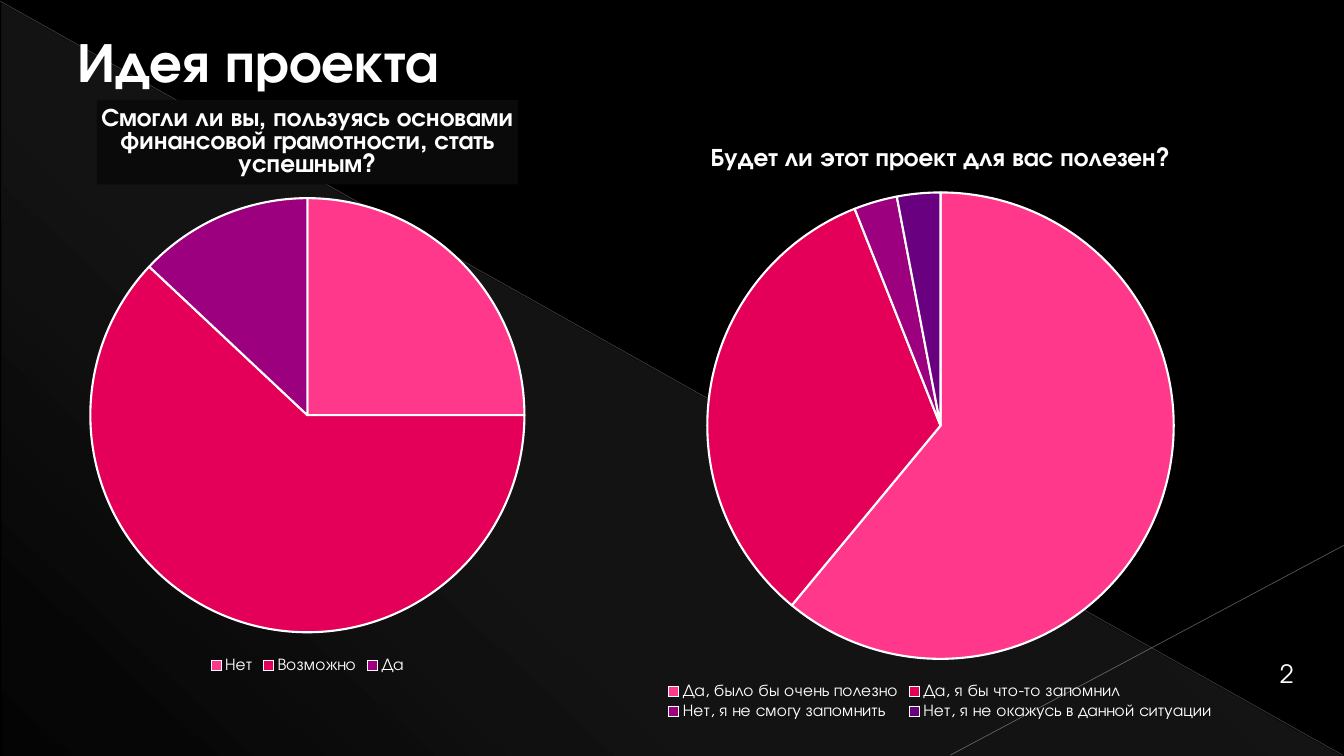
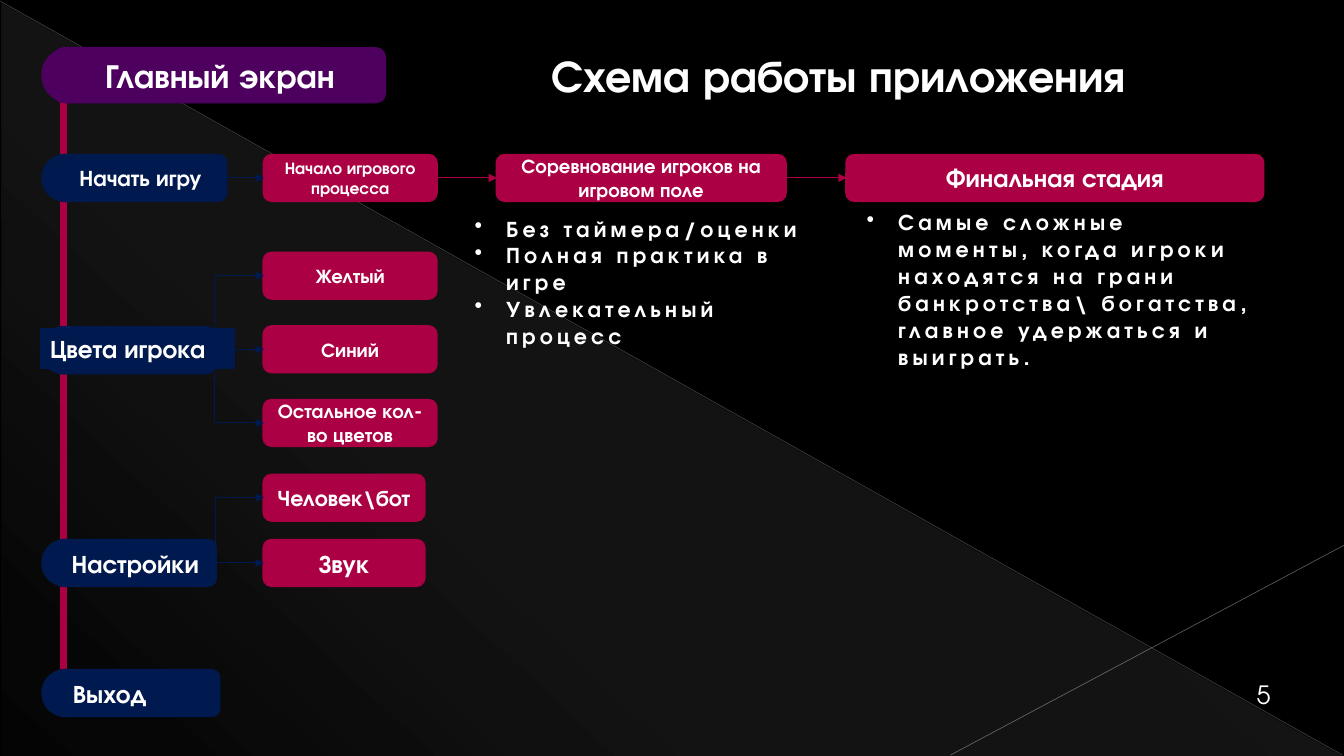
from dataclasses import dataclass

from lxml import etree
from pptx import Presentation
from pptx.chart.data import CategoryChartData
from pptx.dml.color import RGBColor
from pptx.enum.chart import XL_CHART_TYPE, XL_LEGEND_POSITION
from pptx.enum.shapes import MSO_CONNECTOR, MSO_SHAPE
from pptx.enum.text import MSO_ANCHOR, PP_ALIGN
from pptx.oxml import parse_xml
from pptx.oxml.ns import nsdecls, qn
from pptx.util import Pt


@dataclass(frozen=True)
class Theme:
    """Colours and type sizes of the presentation."""

    font: str = "TeX Gyre Adventor"
    background: str = "000000"
    text: str = "FFFFFF"
    veil: str = "D2D2D2"
    diagonal: str = "BFBFBF"
    corner: str = "C6C6C6"
    title_panel: str = "0A0A0A"
    violet: str = "4E005F"
    navy: str = "001A4F"
    crimson: str = "AB0043"
    slices: tuple = ("FF388C", "E40059", "9C007F", "68007F")
    title: int = 40
    subtitle: int = 32
    heading: int = 24
    label: int = 18
    body: int = 16
    small: int = 14
    tiny: int = 12


@dataclass(frozen=True)
class Box:
    """A rectangle in points."""

    left: float
    top: float
    width: float
    height: float

    def inner(self, left, top, width, height):
        """Return a box placed relative to this one."""
        return Box(self.left + left, self.top + top, width, height)

    def lengths(self):
        """Return the four lengths for a shape call."""
        return Pt(self.left), Pt(self.top), Pt(self.width), Pt(self.height)

    @property
    def right(self):
        """Return the right edge."""
        return self.left + self.width

    @property
    def middle(self):
        """Return the vertical centre."""
        return self.top + self.height / 2


THEME = Theme()
PAGE = Box(0, 0, 960, 540)
ROW = 32.4


def style_font(font, size, bold=True):
    """Apply the theme typeface and text colour."""
    font.name = THEME.font
    font.size = Pt(size)
    font.bold = bold
    font.color.rgb = RGBColor.from_string(THEME.text)


def add_text(slide, box, lines, size, bold=True):
    """Add a text box with one paragraph for each line."""
    shape = slide.shapes.add_textbox(*box.lengths())
    shape.text_frame.word_wrap = True
    shape.text_frame.text = "\n".join(lines)
    for paragraph in shape.text_frame.paragraphs:
        style_font(paragraph.runs[0].font, size, bold)
    return shape


def add_bullets(slide, box, lines):
    """Add a bulleted list with widely spaced letters."""
    shape = add_text(slide, box, lines, THEME.body)
    for paragraph in shape.text_frame.paragraphs:
        properties = paragraph._p.get_or_add_pPr()
        properties.set("marL", str(Pt(22.5)))
        properties.set("indent", str(-Pt(22.5)))
        etree.SubElement(properties, qn("a:buChar")).set("char", "•")
        paragraph.runs[0]._r.get_or_add_rPr().set("spc", "300")


def add_block(slide, kind, box, color, text="", size=THEME.label, align=PP_ALIGN.CENTER):
    """Add a filled shape with an optional label."""
    shape = slide.shapes.add_shape(kind, *box.lengths())
    shape.shadow.inherit = False
    shape.fill.solid()
    shape.fill.fore_color.rgb = RGBColor.from_string(color)
    shape.line.color.rgb = RGBColor.from_string(color)
    shape.line.width = Pt(2)
    if text:
        shape.text_frame.text = text
        shape.text_frame.vertical_anchor = MSO_ANCHOR.MIDDLE
        paragraph = shape.text_frame.paragraphs[0]
        paragraph.alignment = align
        style_font(paragraph.runs[0].font, size)
    return shape


def add_line(slide, start, end, color, width=0.75, kind=MSO_CONNECTOR.STRAIGHT):
    """Add a connector without a shadow."""
    connector = slide.shapes.add_connector(kind, *(Pt(value) for value in start + end))
    connector.line.color.rgb = RGBColor.from_string(color)
    connector.line.width = Pt(width)
    etree.SubElement(connector._element.spPr, qn("a:effectLst"))
    return connector


def add_arrow(slide, start, end, color):
    """Add an arrow that turns at its start when the heights differ."""
    level = abs(start[1] - end[1]) < 1
    kind = MSO_CONNECTOR.STRAIGHT if level else MSO_CONNECTOR.ELBOW
    connector = add_line(slide, start, end, color, kind=kind)
    if not level:
        adjustments = next(connector._element.iter(qn("a:avLst")))
        guide = etree.SubElement(adjustments, qn("a:gd"))
        guide.set("name", "adj1")
        guide.set("fmla", "val 0")
    outline = connector.line._get_or_add_ln()
    etree.SubElement(outline, qn("a:tailEnd")).set("type", "triangle")


def set_line_alpha(connector, percent):
    """Make a connector translucent."""
    color = next(connector._element.spPr.iter(qn("a:srgbClr")))
    etree.SubElement(color, qn("a:alpha")).set("val", str(percent * 1000))


def add_backdrop(slide, box):
    """Draw the shared dark background, veil and thin lines."""
    slide.background.fill.solid()
    slide.background.fill.fore_color.rgb = RGBColor.from_string(THEME.background)
    veil = add_block(
        slide, MSO_SHAPE.RIGHT_TRIANGLE, box.inner(1, 1.5, 958, 538.5), THEME.veil
    )
    veil.line.fill.background()
    stops = "".join(
        f'<a:gs pos="{position * 1000}"><a:srgbClr val="{THEME.veil}">'
        f'<a:alpha val="{alpha * 1000}"/></a:srgbClr></a:gs>'
        for position, alpha in ((0, 10), (70, 8), (100, 1))
    )
    gradient = parse_xml(
        f'<a:gradFill {nsdecls("a")} rotWithShape="1"><a:gsLst>{stops}</a:gsLst>'
        '<a:lin ang="7980000" scaled="0"/></a:gradFill>'
    )
    properties = veil._element.spPr
    properties.replace(properties.find(qn("a:solidFill")), gradient)
    for start, end, color, width, alpha in (
        ((0, 0.7), (959, 539.3), THEME.diagonal, 0.39, 35),
        ((960, 389.5), (679, 539.3), THEME.corner, 0.47, 45),
    ):
        start = (box.left + start[0], box.top + start[1])
        end = (box.left + end[0], box.top + end[1])
        set_line_alpha(add_line(slide, start, end, color, width), alpha)


def add_page(presentation, title, title_box, title_size, number, number_box):
    """Add a slide with backdrop, title and page number."""
    slide = presentation.slides.add_slide(presentation.slide_layouts[6])
    add_backdrop(slide, PAGE)
    add_text(slide, title_box, [title], title_size)
    add_text(slide, number_box, [number], THEME.label, bold=False)
    return slide


def add_pie(slide, box, title, answers, panel=None):
    """Add a pie chart of survey answers in percent."""
    data = CategoryChartData()
    data.categories = list(answers)
    data.add_series("Series 1", list(answers.values()))
    chart = slide.shapes.add_chart(XL_CHART_TYPE.PIE, *box.lengths(), data).chart
    style_font(chart.font, 10, bold=False)
    chart.has_title = True
    chart.chart_title.include_in_layout = False
    chart.chart_title.text_frame.text = title
    paragraph = chart.chart_title.text_frame.paragraphs[0]
    paragraph.line_spacing = 0.8
    style_font(paragraph.runs[0].font, THEME.label)
    if panel:
        chart.chart_title.format.fill.solid()
        chart.chart_title.format.fill.fore_color.rgb = RGBColor.from_string(panel)
    chart.has_legend = True
    chart.legend.position = XL_LEGEND_POSITION.BOTTOM
    chart.legend.include_in_layout = False
    style_font(chart.legend.font, THEME.tiny, bold=False)
    plot = chart.plots[0]
    plot.vary_by_categories = True
    for index, color in enumerate(THEME.slices[: len(answers)]):
        piece = plot.series[0].points[index].format
        piece.fill.solid()
        piece.fill.fore_color.rgb = RGBColor.from_string(color)
        piece.line.color.rgb = RGBColor.from_string(THEME.text)
        piece.line.width = Pt(1.5)


def add_node(slide, box, color, text="", size=THEME.label, align=PP_ALIGN.CENTER):
    """Add a menu node with a round left end."""
    cap = box.inner(-9, 0, min(box.height, 38), box.height)
    add_block(slide, MSO_SHAPE.OVAL, cap, color)
    return add_block(slide, MSO_SHAPE.ROUNDED_RECTANGLE, box, color, text, size, align)


def add_options(slide, start, boxes, labels):
    """Add option blocks joined to one menu node."""
    for box, (text, size) in zip(boxes, labels):
        add_block(slide, MSO_SHAPE.ROUNDED_RECTANGLE, box, THEME.crimson, text, size)
        add_arrow(slide, start, (box.left, box.middle), THEME.navy)


def add_menu(slide, box):
    """Draw the main screen menu with its branches."""
    add_block(slide, MSO_SHAPE.DOWN_ARROW, box.inner(13, 38, 5.8, 438), THEME.crimson)
    add_node(slide, box.inner(10, 0, 235.4, 38.2), THEME.violet, "Главный экран", THEME.heading)
    start = box.inner(10, 76.3, 122, ROW)
    colors = box.inner(9, 199.4, 114.5, ROW)
    settings = box.inner(10, 351.3, 114.5, ROW)
    leave = box.inner(10, 444.2, 117, ROW)
    add_node(slide, start, THEME.navy, "Начать игру", THEME.body)
    add_node(slide, colors, THEME.navy)
    band = add_block(
        slide, MSO_SHAPE.RECTANGLE, box.inner(-0.7, 200.1, 139, 28.8),
        THEME.navy, "Цвета игрока", align=PP_ALIGN.LEFT,
    )
    band.line.width = Pt(0.75)
    add_node(slide, settings, THEME.navy, "Настройки")
    exit_node = add_node(slide, leave, THEME.navy, "Выход", align=PP_ALIGN.LEFT)
    exit_node.text_frame.margin_left = Pt(11)

    option_left = 159
    add_options(
        slide, (colors.right, colors.middle),
        [box.inner(option_left, 146.1 + 52.6 * row, 123.1, ROW) for row in range(3)],
        [(text, THEME.small) for text in ("Желтый", "Синий", "Остальное кол-во цветов")],
    )
    add_options(
        slide, (settings.right, settings.middle),
        [box.inner(option_left, 351.3 - 46.6 * row, 114.5, ROW) for row in range(2)],
        [("Звук", THEME.label), ("Человек\\бот", THEME.body)],
    )


def add_stages(slide, box):
    """Draw the row of game stages with the notes below."""
    previous, color = box.left - 27, THEME.navy
    for left, width, text, size in (
        (0, 123.1, "Начало игрового процесса", THEME.tiny),
        (166.4, 206, "Соревнование игроков на игровом поле", THEME.small),
        (416.2, 297.4, "Финальная стадия", THEME.label),
    ):
        stage = box.inner(left, 0, width, ROW)
        add_block(slide, MSO_SHAPE.ROUNDED_RECTANGLE, stage, THEME.crimson, text, size)
        add_arrow(slide, (previous, stage.middle), (stage.left, stage.middle), color)
        previous, color = stage.right, THEME.crimson
    add_bullets(
        slide, box.inner(143.3, 38.9, 270, 104.4),
        ["Без таймера/оценки", "Полная практика в игре", "Увлекательный процесс"],
    )
    add_bullets(
        slide, box.inner(423.4, 34.5, 297.4, 143.3),
        ["Самые сложные моменты, когда игроки находятся на грани "
         "банкротства\\ богатства, главное удержаться и выиграть."],
    )


def build_survey(presentation):
    """Build the slide with the two survey charts."""
    slide = add_page(
        presentation, "Идея проекта", Box(48.2, 15.1, 871, 72.7), THEME.title,
        "2", Box(907.2, 466.6, 24.5, 28.8),
    )
    add_pie(
        slide, Box(-14.4, 59, 468, 424.8),
        "Смогли ли вы, пользуясь основами финансовой грамотности, стать успешным?",
        {"Нет": 25, "Возможно": 62, "Да": 13}, THEME.title_panel,
    )
    add_pie(
        slide, Box(437.8, 87.8, 468, 429.1), "Будет ли этот проект для вас полезен?",
        {"Да, было бы очень полезно": 61, "Да, я бы что-то запомнил": 33,
         "Нет, я не смогу запомнить": 3, "Нет, я не окажусь в данной ситуации": 3},
    )


def build_scheme(presentation):
    """Build the slide with the application scheme."""
    slide = add_page(
        presentation, "Схема работы приложения", Box(386.6, 30.2, 480, 46), THEME.subtitle,
        "5", Box(890.6, 481.7, 24.5, 28.8),
    )
    add_menu(slide, Box(29.5, 34.6, 283, 477))
    add_stages(slide, Box(188.6, 110.9, 714, 178))


def main():
    """Build and save the presentation."""
    presentation = Presentation()
    presentation.slide_width = Pt(PAGE.width)
    presentation.slide_height = Pt(PAGE.height)
    build_survey(presentation)
    build_scheme(presentation)
    presentation.save("out.pptx")


if __name__ == "__main__":
    main()
